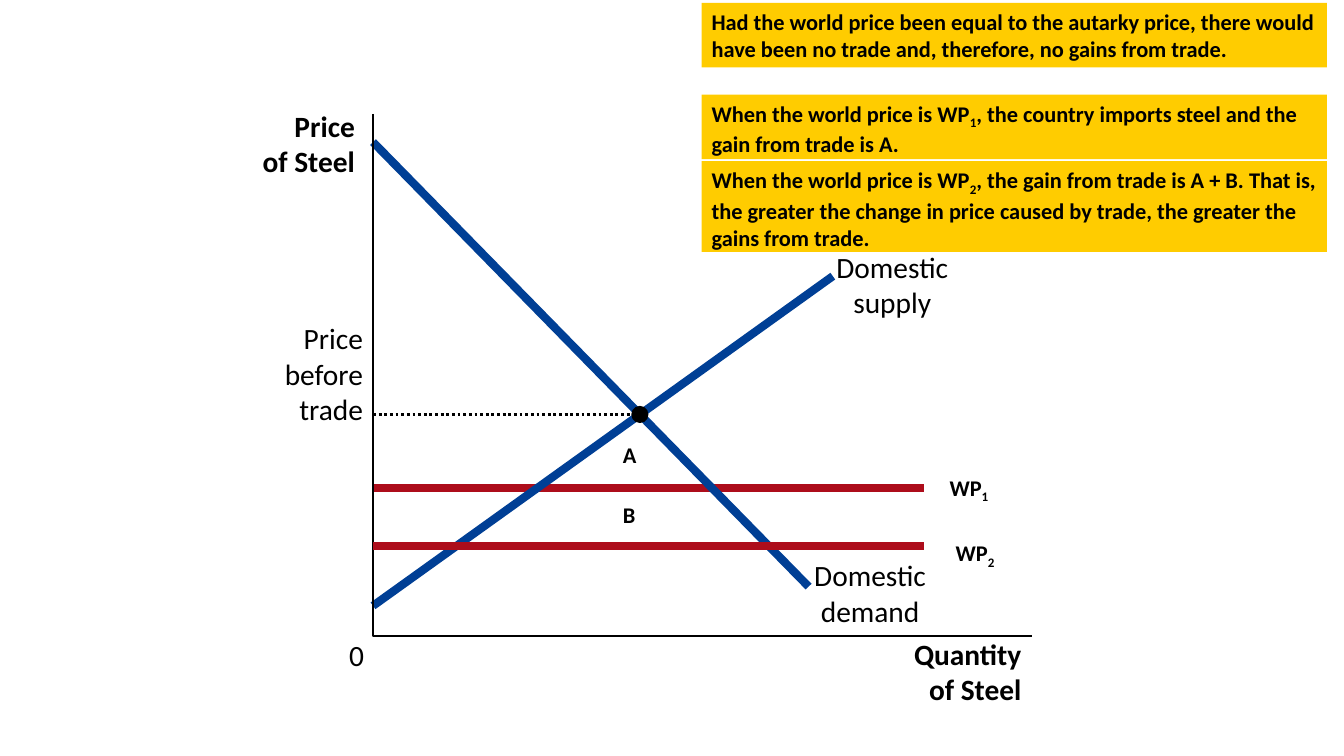
from lxml.etree import SubElement
from pptx import Presentation
from pptx.dml.color import RGBColor
from pptx.enum.dml import MSO_LINE
from pptx.enum.shapes import MSO_CONNECTOR, MSO_SHAPE
from pptx.enum.text import MSO_ANCHOR, MSO_AUTO_SIZE, PP_ALIGN
from pptx.oxml.ns import qn
from pptx.util import Inches, Pt

COLORS = {"curve": "003F95", "world": "AD0D1B", "ink": "000000", "callout": "FFCC00"}
FONT = "Calibri"
CURVE_WIDTH, AXIS_WIDTH = 5.88, 2

# Plot coordinates: inches right of and above the origin
ORIGIN_X, ORIGIN_Y = 3.7, 6.31
AXIS_LENGTH, AXIS_HEIGHT = 6.54, 5.18
SUPPLY = ((0, 0.3), (4.56, 3.57))
DEMAND = ((0, 4.9), (4.32, 0.49))
WORLD_PRICE_1, WORLD_PRICE_2 = 1.47, 0.89
WORLD_LENGTH = 5.46
DOT = 0.17

# Lines, left, top, width, alignment, bold
AXIS_LABELS = [
    (("Domestic", "supply"), 8.2, 2.47, 1.3, PP_ALIGN.CENTER, False),
    (("Domestic", "demand"), 7.98, 5.53, 1.3, PP_ALIGN.CENTER, False),
    (("Price", "before", "trade"), 2.6, 3.18, 1, PP_ALIGN.RIGHT, False),
    (("Price", "of Steel"), 2.32, 1.07, 1.2, PP_ALIGN.RIGHT, True),
    (("0",), 3.11, 6.32, 0.5, PP_ALIGN.RIGHT, False),
    (("Quantity", "of Steel"), 8.83, 6.31, 1.3, PP_ALIGN.RIGHT, True),
]
# Every second part of a text is a subscript
PLOT_LABELS = [
    (("A",), 6.08, 4.33, 0.42),
    (("B",), 6.08, 4.92, 0.42),
    (("WP", "1"), 9.32, 4.65, 0.76),
    (("WP", "2"), 9.38, 5.3, 0.7),
]
CALLOUT_LEFT, CALLOUT_WIDTH = 6.96, 6.2
CALLOUTS = [
    (("Had the world price been equal to the autarky price, there would have been "
      "no trade and, therefore, no gains from trade.",), 0.03, 0.64),
    (("When the world price is WP", "1",
      ", the country imports steel and the gain from trade is A."), 0.94, 0.64),
    (("When the world price is WP", "2",
      ", the gain from trade is A + B. That is, the greater the change in price "
      "caused by trade, the greater the gains from trade."), 1.6, 0.9),
]


def color(name):
    return RGBColor.from_string(COLORS[name])


def place(point):
    """Turn plot coordinates into a position on the slide."""
    return Inches(ORIGIN_X + point[0]), Inches(ORIGIN_Y - point[1])


def crossing(first, second):
    """Point where two straight curves meet."""
    (x1, y1), (x2, y2) = first
    (x3, y3), (x4, y4) = second
    slope_1, slope_2 = (y2 - y1) / (x2 - x1), (y4 - y3) / (x4 - x3)
    x = (y3 - slope_2 * x3 - y1 + slope_1 * x1) / (slope_1 - slope_2)
    return x, y1 + slope_1 * (x - x1)


def draw_line(slide, start, end, color_name, width=CURVE_WIDTH):
    line = slide.shapes.add_connector(MSO_CONNECTOR.STRAIGHT, *place(start), *place(end))
    line.line.color.rgb = color(color_name)
    line.line.width = Pt(width)
    SubElement(line._element.spPr, qn("a:effectLst"))
    return line


def draw_world_price(slide, height):
    draw_line(slide, (0, height), (WORLD_LENGTH, height), "world")


def draw_axes(slide):
    builder = slide.shapes.build_freeform(*place((0, AXIS_HEIGHT)))
    builder.add_line_segments([place((0, 0)), place((AXIS_LENGTH, 0))], close=False)
    axes = builder.convert_to_shape()
    axes.shadow.inherit = False
    axes.fill.background()
    axes.line.color.rgb = color("ink")
    axes.line.width = Pt(AXIS_WIDTH)


def draw_equilibrium(slide):
    x, y = crossing(SUPPLY, DEMAND)
    guide = draw_line(slide, (0, y), (x, y), "ink", AXIS_WIDTH)
    guide.line.dash_style = MSO_LINE.ROUND_DOT
    dot = slide.shapes.add_shape(MSO_SHAPE.OVAL, *place((x - DOT / 2, y + DOT / 2)),
                                 Inches(DOT), Inches(DOT))
    dot.shadow.inherit = False
    dot.fill.solid()
    dot.fill.fore_color.rgb = color("ink")
    dot.line.fill.background()


def format_paragraph(paragraph, size, bold, alignment=PP_ALIGN.LEFT):
    paragraph.alignment = alignment
    font = paragraph.font
    font.name, font.size, font.bold = FONT, Pt(size), bold
    font.color.rgb = color("ink")


def write_parts(shape, parts):
    """Write bold text in which every second part is a subscript."""
    frame = shape.text_frame
    frame.word_wrap = True
    frame.auto_size = MSO_AUTO_SIZE.SHAPE_TO_FIT_TEXT
    frame.vertical_anchor = MSO_ANCHOR.TOP
    paragraph = frame.paragraphs[0]
    format_paragraph(paragraph, 16, True)
    for index, part in enumerate(parts):
        run = paragraph.add_run()
        run.text = part
        if index % 2:
            run._r.get_or_add_rPr().set("baseline", "-25000")


def add_axis_label(slide, lines, left, top, width, alignment, bold):
    box = slide.shapes.add_textbox(Inches(left), Inches(top), Inches(width),
                                   Inches(0.355 * len(lines)))
    frame = box.text_frame
    frame.word_wrap = True
    frame.margin_left = frame.margin_right = frame.margin_top = frame.margin_bottom = 0
    frame.text = "\n".join(lines)
    for paragraph in frame.paragraphs:
        format_paragraph(paragraph, 21, bold, alignment)


def add_callout(slide, parts, top, height):
    box = slide.shapes.add_shape(MSO_SHAPE.RECTANGLE, Inches(CALLOUT_LEFT), Inches(top),
                                 Inches(CALLOUT_WIDTH), Inches(height))
    box.shadow.inherit = False
    box.fill.solid()
    box.fill.fore_color.rgb = color("callout")
    box.line.fill.background()
    write_parts(box, parts)


def main():
    presentation = Presentation()
    presentation.slide_width, presentation.slide_height = Inches(13.33), Inches(7.5)
    slide = presentation.slides.add_slide(presentation.slide_layouts[6])

    draw_world_price(slide, WORLD_PRICE_1)
    for curve in (SUPPLY, DEMAND):
        draw_line(slide, *curve, "curve")
    draw_axes(slide)
    draw_equilibrium(slide)
    draw_world_price(slide, WORLD_PRICE_2)

    for label in AXIS_LABELS:
        add_axis_label(slide, *label)
    for parts, left, top, width in PLOT_LABELS:
        box = slide.shapes.add_textbox(Inches(left), Inches(top), Inches(width), Inches(0.37))
        write_parts(box, parts)
    for callout in CALLOUTS:
        add_callout(slide, *callout)

    presentation.save("out.pptx")


if __name__ == "__main__":
    main()
